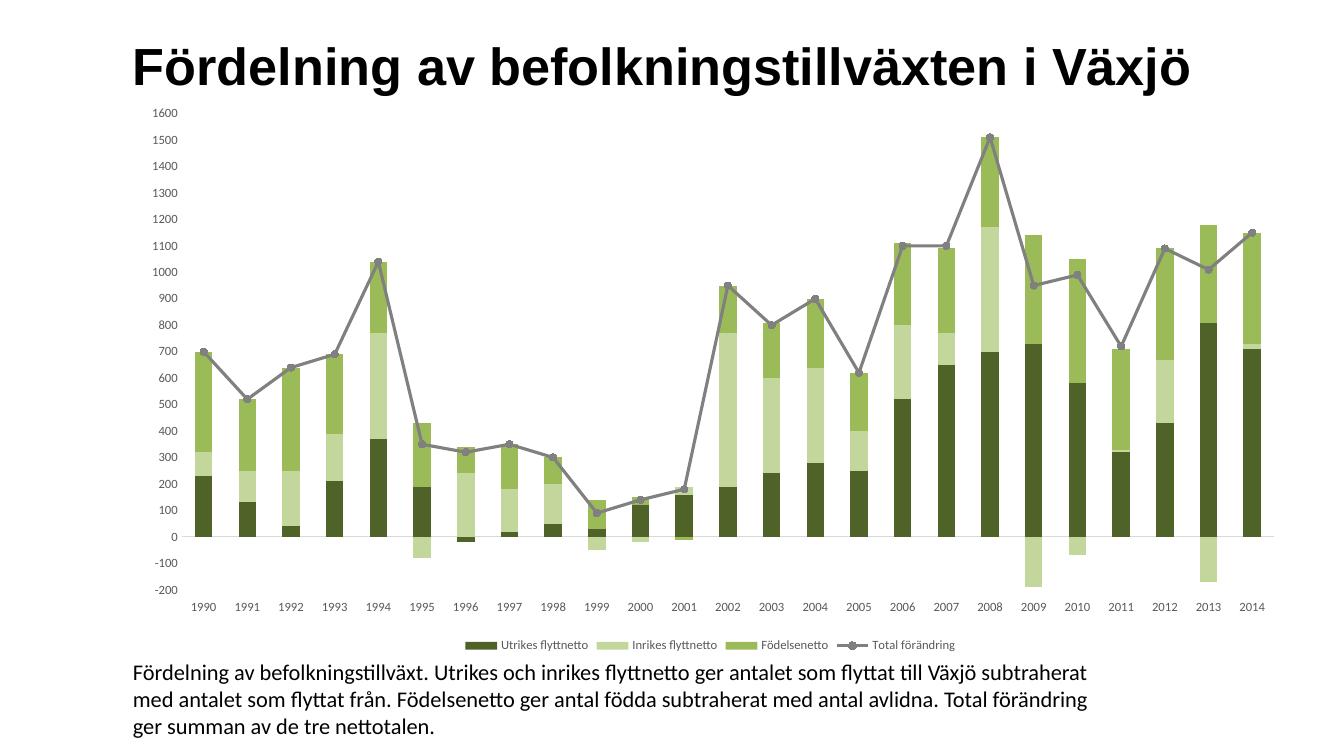
from dataclasses import dataclass

from lxml import etree
from pptx import Presentation
from pptx import util as u
from pptx.chart import data as chart_data
from pptx.dml.color import RGBColor
from pptx.enum import chart as ce
from pptx.enum import text as te
from pptx.oxml import ns

EMU_PER_PX = 9144  # 100 px to the inch


@dataclass(frozen=True)
class Theme:
    ink: str = "000000"
    label: str = "595959"
    axis: str = "D9D9D9"
    abroad: str = "4F6228"
    domestic: str = "C3D69B"
    births: str = "9BBB59"
    total: str = "808080"
    heading_font: str = "Arial"
    body_font: str = "Calibri"
    heading_size: float = 37.3
    body_size: float = 16
    label_size: float = 9


@dataclass(frozen=True)
class Frame:
    left: int
    top: int
    width: int
    height: int

    def emu(self) -> list[int]:
        return [px(n) for n in (self.left, self.top, self.width, self.height)]


@dataclass(frozen=True)
class Series:
    name: str
    color: str
    values: tuple[int, ...]


@dataclass(frozen=True)
class TextBlock:
    frame: Frame
    words: str
    font: str
    size: float
    bold: bool
    anchor: te.MSO_ANCHOR


THEME = Theme()
YEARS = [str(year) for year in range(1990, 2015)]
CHART_FRAME = Frame(122, 96, 1165, 556)
PLOT_SHARE = {"x": 0.05, "y": 0.03, "w": 0.93, "h": 0.85}

NET_FLOWS = (
    Series("Utrikes flyttnetto", THEME.abroad, (
        230, 130, 40, 210, 370, 190, -20, 20, 50, 30, 120, 160, 190, 240, 280,
        250, 520, 650, 700, 730, 580, 320, 430, 810, 710)),
    Series("Inrikes flyttnetto", THEME.domestic, (
        90, 120, 210, 180, 400, -80, 240, 160, 150, -50, -20, 30, 580, 360, 360,
        150, 280, 120, 470, -190, -70, 10, 240, -170, 20)),
    Series("Födelsenetto", THEME.births, (
        380, 270, 390, 300, 270, 240, 100, 170, 100, 110, 30, -10, 180, 210, 260,
        220, 310, 320, 340, 410, 470, 380, 420, 370, 420)),
)
TOTAL = Series("Total förändring", THEME.total, (
    700, 520, 640, 690, 1040, 350, 320, 350, 300, 90, 140, 180, 950, 800, 900,
    620, 1100, 1100, 1510, 950, 990, 720, 1090, 1010, 1150))

TEXTS = (
    TextBlock(Frame(122, 22, 1071, 84), "Fördelning av befolkningstillväxten i Växjö",
              THEME.heading_font, THEME.heading_size, True, te.MSO_ANCHOR.MIDDLE),
    TextBlock(Frame(122, 648, 976, 91),
              "Fördelning av befolkningstillväxt. Utrikes och inrikes flyttnetto ger "
              "antalet som flyttat till Växjö subtraherat med antalet som flyttat från. "
              "Födelsenetto ger antal födda subtraherat med antal avlidna. Total "
              "förändring ger summan av de tre nettotalen.",
              THEME.body_font, THEME.body_size, False, te.MSO_ANCHOR.TOP),
)


def px(length: int) -> int:
    return length * EMU_PER_PX


def rgb(color: str) -> RGBColor:
    return RGBColor.from_string(color)


def style_font(font, name: str, size: float, color: str, bold: bool = False) -> None:
    font.name, font.size, font.bold = name, u.Pt(size), bold
    font.color.rgb = rgb(color)


def style_label(font) -> None:
    style_font(font, THEME.body_font, THEME.label_size, THEME.label)


def add_text(page, block: TextBlock) -> None:
    frame = page.shapes.add_textbox(*block.frame.emu()).text_frame
    frame.word_wrap = True
    frame.vertical_anchor = block.anchor
    span = frame.paragraphs[0].add_run()
    span.text = block.words
    style_font(span.font, block.font, block.size, THEME.ink, block.bold)


def add_child(parent, tag: str, value=None):
    child = etree.SubElement(parent, ns.qn(tag))
    if value is not None:
        child.set("val", str(value))
    return child


def move_last_series_to_line(chart) -> None:
    """Take the last column series into a line plot on the same axes."""
    bars = chart.plots[0]._element
    series = bars.findall(ns.qn("c:ser"))[-1]
    for bar_only in series.findall(ns.qn("c:invertIfNegative")):
        series.remove(bar_only)
    lines = bars.makeelement(ns.qn("c:lineChart"))
    bars.addnext(lines)
    add_child(lines, "c:grouping", "standard")
    add_child(lines, "c:varyColors", 0)
    lines.append(series)
    add_child(lines, "c:marker", 1)
    for axis_id in bars.findall(ns.qn("c:axId")):
        add_child(lines, "c:axId", axis_id.get("val"))


def place_plot(chart) -> None:
    area = chart.plots[0]._element.getparent()
    for old in area.findall(ns.qn("c:layout")):
        area.remove(old)
    layout = area.makeelement(ns.qn("c:layout"))
    area.insert(0, layout)
    manual = add_child(layout, "c:manualLayout")
    add_child(manual, "c:layoutTarget", "inner")
    for side in "xy":
        add_child(manual, f"c:{side}Mode", "edge")
    for side, share in PLOT_SHARE.items():
        add_child(manual, f"c:{side}", share)


def style_axes(chart) -> None:
    years, people = chart.category_axis, chart.value_axis
    for axis in (years, people):
        axis.major_tick_mark = axis.minor_tick_mark = ce.XL_TICK_MARK.NONE
        axis.has_major_gridlines = False
        style_label(axis.tick_labels.font)
    years.tick_label_position = ce.XL_TICK_LABEL_POSITION.LOW
    years.format.line.color.rgb = rgb(THEME.axis)
    years.format.line.width = u.Pt(0.75)
    people.format.line.fill.background()
    people.minimum_scale, people.maximum_scale, people.major_unit = -200, 1600, 100


def style_total(line) -> None:
    line.smooth = False
    line.format.line.color.rgb = rgb(TOTAL.color)
    line.format.line.width = u.Pt(2.25)
    line.marker.style = ce.XL_MARKER_STYLE.CIRCLE
    line.marker.size = 5
    line.marker.format.fill.solid()
    line.marker.format.fill.fore_color.rgb = rgb(TOTAL.color)
    line.marker.format.line.color.rgb = rgb(TOTAL.color)


def add_population_chart(page) -> None:
    source = chart_data.CategoryChartData()
    source.categories = YEARS
    for series in (*NET_FLOWS, TOTAL):
        source.add_series(series.name, series.values)
    chart = page.shapes.add_chart(
        ce.XL_CHART_TYPE.COLUMN_STACKED, *CHART_FRAME.emu(), source).chart
    style_label(chart.font)
    chart.has_title = False
    chart.has_legend = True
    chart.legend.position = ce.XL_LEGEND_POSITION.BOTTOM
    chart.legend.include_in_layout = False
    style_label(chart.legend.font)

    move_last_series_to_line(chart)
    place_plot(chart)
    style_axes(chart)
    columns, lines = chart.plots
    columns.gap_width, columns.overlap = 150, 100
    columns.vary_by_categories = False
    for column, series in zip(columns.series, NET_FLOWS):
        column.invert_if_negative = False
        column.format.fill.solid()
        column.format.fill.fore_color.rgb = rgb(series.color)
    style_total(lines.series[0])


def main() -> None:
    deck = Presentation()
    deck.slide_width, deck.slide_height = px(1333), px(750)
    page = deck.slides.add_slide(deck.slide_layouts[6])
    add_population_chart(page)
    for block in TEXTS:
        add_text(page, block)
    deck.save("out.pptx")


if __name__ == "__main__":
    main()
